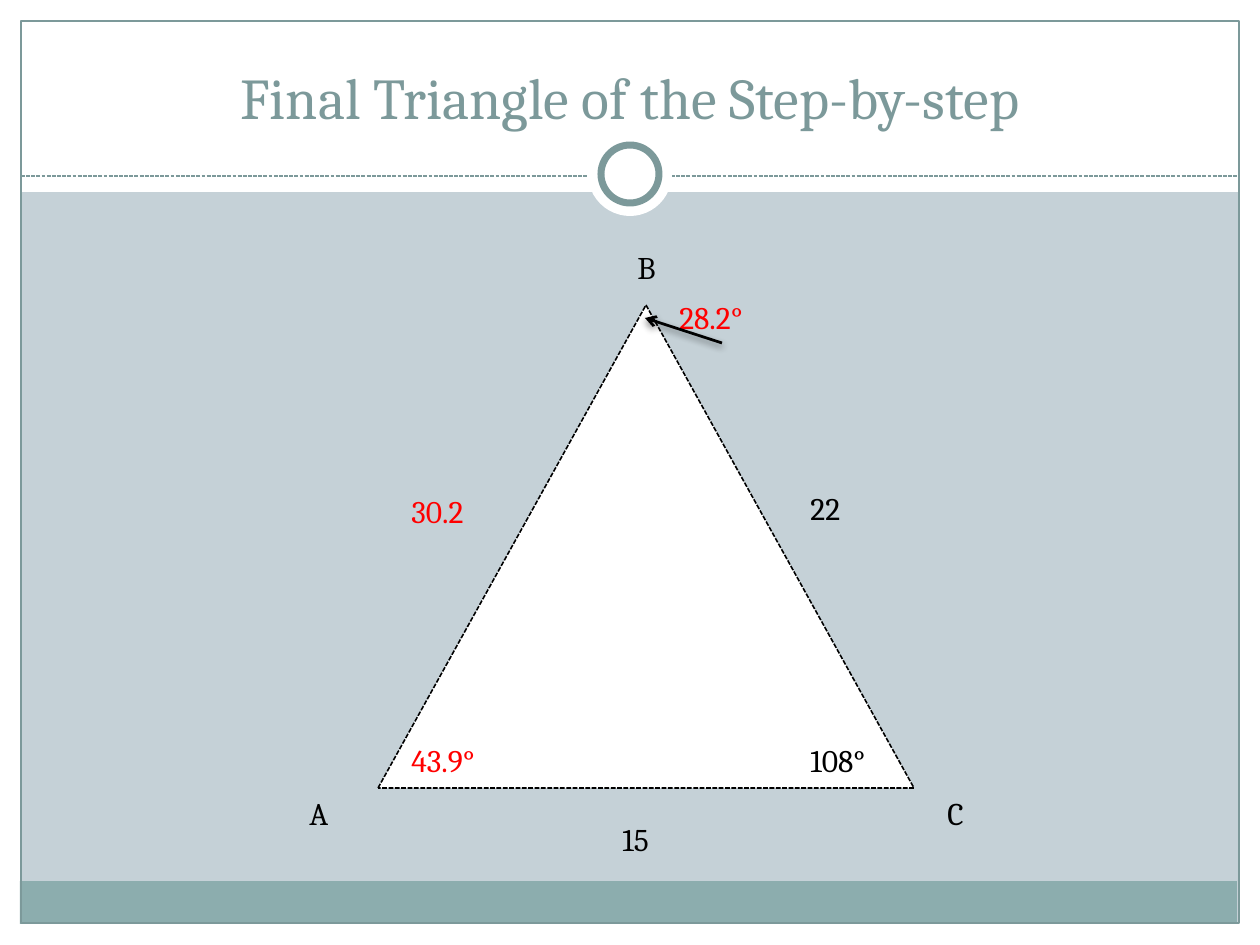
from dataclasses import dataclass

from lxml import etree
from pptx import Presentation
from pptx.dml.color import RGBColor
from pptx.enum.dml import MSO_LINE
from pptx.enum.shapes import MSO_CONNECTOR, MSO_SHAPE
from pptx.enum.text import MSO_ANCHOR, MSO_AUTO_SIZE, PP_ALIGN
from pptx.oxml import parse_xml
from pptx.oxml.ns import nsdecls, qn
from pptx.slide import Slide
from pptx.util import Pt

RECTANGLE = MSO_SHAPE.RECTANGLE
OVAL = MSO_SHAPE.OVAL
TRIANGLE = MSO_SHAPE.ISOSCELES_TRIANGLE
STRAIGHT = MSO_CONNECTOR.STRAIGHT
DASH = MSO_LINE.SQUARE_DOT
GROW = MSO_AUTO_SIZE.SHAPE_TO_FIT_TEXT
FIXED = MSO_AUTO_SIZE.NONE

EMU_PER_PX = 914400 / 126
WIDTH, HEIGHT, MARGIN = 1260, 945, 21
HEADER_HEIGHT = 192
LABEL_HEIGHT = 50


@dataclass(frozen=True)
class Theme:
    font: str = "Cambria"
    background: str = "C5D1D7"
    paper: str = "FFFFFF"
    band: str = "8CADAE"
    accent: str = "7C999A"
    given: str = "000000"
    solved: str = "FF0000"
    title_size: int = 33
    label_size: int = 18


THEME = Theme()


@dataclass(frozen=True)
class Box:
    left: int
    top: int
    width: int
    height: int


@dataclass(frozen=True)
class Stroke:
    color: str
    width: float
    dashed: bool = False


@dataclass(frozen=True)
class Block:
    preset: int
    box: Box
    fill: str | None = None
    stroke: Stroke | None = None


@dataclass(frozen=True)
class Label:
    text: str
    left: int
    top: int
    width: int
    color: str = THEME.given


BORDER = Stroke(THEME.accent, 0.75)
DIVIDER = Stroke(THEME.accent, 0.75, dashed=True)

BACKDROP = (
    Block(RECTANGLE, Box(0, HEIGHT - MARGIN, WIDTH, MARGIN), THEME.paper),
    Block(RECTANGLE, Box(0, 0, WIDTH, HEADER_HEIGHT), THEME.paper),
    Block(RECTANGLE, Box(0, 0, MARGIN, HEIGHT), THEME.paper),
    Block(RECTANGLE, Box(WIDTH - MARGIN, 0, MARGIN, HEIGHT), THEME.paper),
    Block(RECTANGLE, Box(20, 881, 1217, 43), THEME.band),
    Block(RECTANGLE, Box(MARGIN, MARGIN, WIDTH - 2 * MARGIN, 902), stroke=BORDER),
)
RING = (
    Block(OVAL, Box(588, 132, 84, 84), THEME.paper),
    Block(OVAL, Box(601, 145, 58, 58), THEME.paper, Stroke(THEME.accent, 4)),
)
MAIN_TRIANGLE = Block(
    TRIANGLE, Box(378, 305, 536, 483), THEME.paper, Stroke(THEME.given, 0.9, dashed=True)
)
LABELS = (
    Label("B", 625, 242, 42),
    Label("C", 935, 788, 42),
    Label("A", 297, 788, 53),
    Label("22", 798, 483, 84),
    Label("15", 610, 814, 71),
    Label("30.2", 399, 486, 95, THEME.solved),
    Label("108°", 798, 735, 84),
    Label("43.9°", 399, 735, 105, THEME.solved),
    Label("28.2°", 667, 292, 111, THEME.solved),
)


def px(*lengths: int) -> list[int]:
    return [round(length * EMU_PER_PX) for length in lengths]


def box_emu(box: Box) -> list[int]:
    return px(box.left, box.top, box.width, box.height)


def set_attributes(target, values: dict) -> None:
    for name, value in values.items():
        setattr(target, name, value)


def apply_stroke(line, stroke: Stroke) -> None:
    line.color.rgb = RGBColor.from_string(stroke.color)
    line.width = Pt(stroke.width)
    if stroke.dashed:
        line.dash_style = DASH


def add_block(slide: Slide, block: Block) -> None:
    shape = slide.shapes.add_shape(block.preset, *box_emu(block.box))
    shape.shadow.inherit = False
    if block.fill:
        shape.fill.solid()
        shape.fill.fore_color.rgb = RGBColor.from_string(block.fill)
    else:
        shape.fill.background()
    if block.stroke:
        apply_stroke(shape.line, block.stroke)
    else:
        shape.line.fill.background()


def add_line(slide: Slide, start: tuple[int, int], end: tuple[int, int], stroke: Stroke):
    connector = slide.shapes.add_connector(STRAIGHT, *px(*start, *end))
    apply_stroke(connector.line, stroke)
    effects = etree.SubElement(connector.element.spPr, qn("a:effectLst"))
    return connector, effects


def add_pointer(slide: Slide, start: tuple[int, int], end: tuple[int, int]) -> None:
    """Draw an arrow with a soft shadow below it."""
    connector, effects = add_line(slide, start, end, Stroke(THEME.given, 1.57))
    outline = connector.element.spPr.find(qn("a:ln"))
    etree.SubElement(outline, qn("a:tailEnd"), type="arrow")
    effects.append(parse_xml(
        f'<a:outerShdw {nsdecls("a")} blurRad="{Pt(4)}" dist="{Pt(2)}" dir="5400000" '
        f'rotWithShape="0"><a:srgbClr val="{THEME.given}"><a:alpha val="45000"/>'
        "</a:srgbClr></a:outerShdw>"
    ))


def write_text(shape, text: str, size: int, color: str, frame: dict, alignment) -> None:
    set_attributes(shape.text_frame, {"word_wrap": True, **frame})
    paragraph = shape.text_frame.paragraphs[0]
    paragraph.alignment = alignment
    run = paragraph.add_run()
    run.text = text
    set_attributes(run.font, {"name": THEME.font, "size": Pt(size)})
    run.font.color.rgb = RGBColor.from_string(color)


def add_label(slide: Slide, label: Label) -> None:
    box = Box(label.left, label.top, label.width, LABEL_HEIGHT)
    shape = slide.shapes.add_textbox(*box_emu(box))
    write_text(shape, label.text, THEME.label_size, label.color,
               {"auto_size": GROW}, PP_ALIGN.LEFT)


def place_title(slide: Slide, text: str, box: Box) -> None:
    """Fill the title placeholder and bring it in front of the header."""
    title = slide.shapes.title
    left, top, width, height = box_emu(box)
    set_attributes(title, {"left": left, "top": top, "width": width, "height": height})
    write_text(title, text, THEME.title_size, THEME.accent,
               {"auto_size": FIXED, "vertical_anchor": MSO_ANCHOR.BOTTOM}, PP_ALIGN.CENTER)
    title.element.getparent().append(title.element)


def main() -> None:
    presentation = Presentation()
    presentation.slide_width, presentation.slide_height = px(WIDTH, HEIGHT)
    slide = presentation.slides.add_slide(presentation.slide_layouts[5])
    slide.background.fill.solid()
    slide.background.fill.fore_color.rgb = RGBColor.from_string(THEME.background)

    for block in BACKDROP:
        add_block(slide, block)
    add_line(slide, (MARGIN, 176), (WIDTH - MARGIN, 176), DIVIDER)
    for block in RING:
        add_block(slide, block)
    place_title(slide, "Final Triangle of the Step-by-step", Box(42, 32, 1176, 105))

    add_block(slide, MAIN_TRIANGLE)
    for label in LABELS:
        add_label(slide, label)
    add_pointer(slide, (722, 343), (645, 318))
    presentation.save("out.pptx")


if __name__ == "__main__":
    main()
